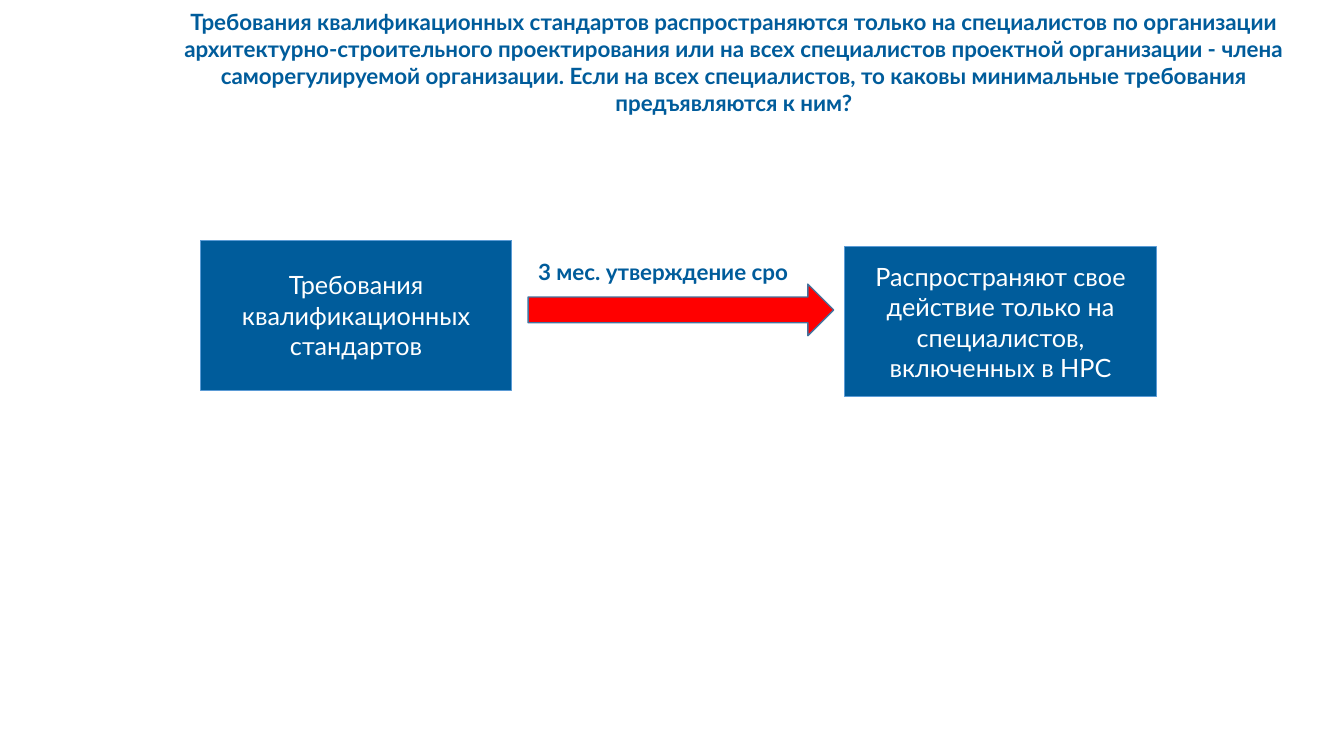
from dataclasses import dataclass

from pptx import Presentation
from pptx.dml.color import RGBColor
from pptx.enum.shapes import MSO_SHAPE
from pptx.enum.text import MSO_ANCHOR, MSO_AUTO_SIZE, PP_ALIGN
from pptx.util import Cm, Pt

RECTANGLE = MSO_SHAPE.RECTANGLE
RIGHT_ARROW = MSO_SHAPE.RIGHT_ARROW
TOP, MIDDLE = MSO_ANCHOR.TOP, MSO_ANCHOR.MIDDLE
LEFT, CENTER = PP_ALIGN.LEFT, PP_ALIGN.CENTER
NO_FIT = MSO_AUTO_SIZE.NONE
TITLE_ONLY = 5


@dataclass(frozen=True)
class Theme:
    font: str = "Lato"
    blue: RGBColor = RGBColor(0x00, 0x5C, 0x9B)
    box_edge: RGBColor = RGBColor(0x5B, 0x9B, 0xD5)
    red: RGBColor = RGBColor(0xFF, 0x00, 0x00)
    arrow_edge: RGBColor = RGBColor(0x43, 0x73, 0x9E)
    white: RGBColor = RGBColor(0xFF, 0xFF, 0xFF)
    heading_size: Pt = Pt(16)
    box_size: Pt = Pt(18)


THEME = Theme()

QUESTION = (
    "Требования квалификационных стандартов распространяются только на "
    "специалистов по организации архитектурно-строительного проектирования "
    "или на всех специалистов проектной организации - члена саморегулируемой "
    "организации. Если на всех специалистов, то каковы минимальные требования "
    "предъявляются к ним?"
)
REQUIREMENTS = "Требования квалификационных стандартов"
APPROVAL = "3 мес. утверждение сро"
SCOPE = "Распространяют свое действие только на специалистов, включенных в НРС"


def write(shape, text, size, color, bold, align, anchor, wrap=True):
    frame = shape.text_frame
    frame.text = text
    frame.auto_size = NO_FIT
    frame.word_wrap = wrap
    frame.vertical_anchor = anchor
    para = frame.paragraphs[0]
    para.alignment = align
    para.font.name = THEME.font
    para.font.size = size
    para.font.bold = bold
    para.font.color.rgb = color


def add_filled(page, preset, left, top, width, height, fill, edge, edge_width):
    shape = page.shapes.add_shape(preset, left, top, width, height)
    shape.shadow.inherit = False
    shape.fill.solid()
    shape.fill.fore_color.rgb = fill
    shape.line.color.rgb = edge
    shape.line.width = Pt(edge_width)
    return shape


def place_title(page, left, top, width, height):
    title = page.shapes.title
    title.left, title.top, title.width, title.height = left, top, width, height
    write(title, QUESTION, THEME.heading_size, THEME.blue, True, CENTER, TOP)


def place_flow(page, left, top, box_width, box_height):
    steps = ((REQUIREMENTS, 0, 0), (SCOPE, Cm(16.24), Cm(0.17)))
    for text, shift_x, shift_y in steps:
        box = add_filled(page, RECTANGLE, left + shift_x, top + shift_y,
                         box_width, box_height, THEME.blue, THEME.box_edge, 0.5)
        write(box, text, THEME.box_size, THEME.white, False, CENTER, MIDDLE)

    arrow_left = left + box_width + Cm(0.41)
    add_filled(page, RIGHT_ARROW, arrow_left, top + Cm(1.11), Cm(7.7), Cm(1.3),
               THEME.red, THEME.arrow_edge, 1)
    label = page.shapes.add_textbox(arrow_left, top + Cm(0.33), Cm(7.21), Cm(0.94))
    write(label, APPROVAL, THEME.heading_size, THEME.blue, True, LEFT, TOP, wrap=False)


def main():
    deck = Presentation()
    deck.slide_width, deck.slide_height = Cm(33.87), Cm(19.05)
    page = deck.slides.add_slide(deck.slide_layouts[TITLE_ONLY])
    place_title(page, Cm(3.38), Cm(0.08), Cm(30.23), Cm(4.52))
    place_flow(page, Cm(5.05), Cm(6.05), Cm(7.85), Cm(3.78))
    deck.save("out.pptx")


if __name__ == "__main__":
    main()
